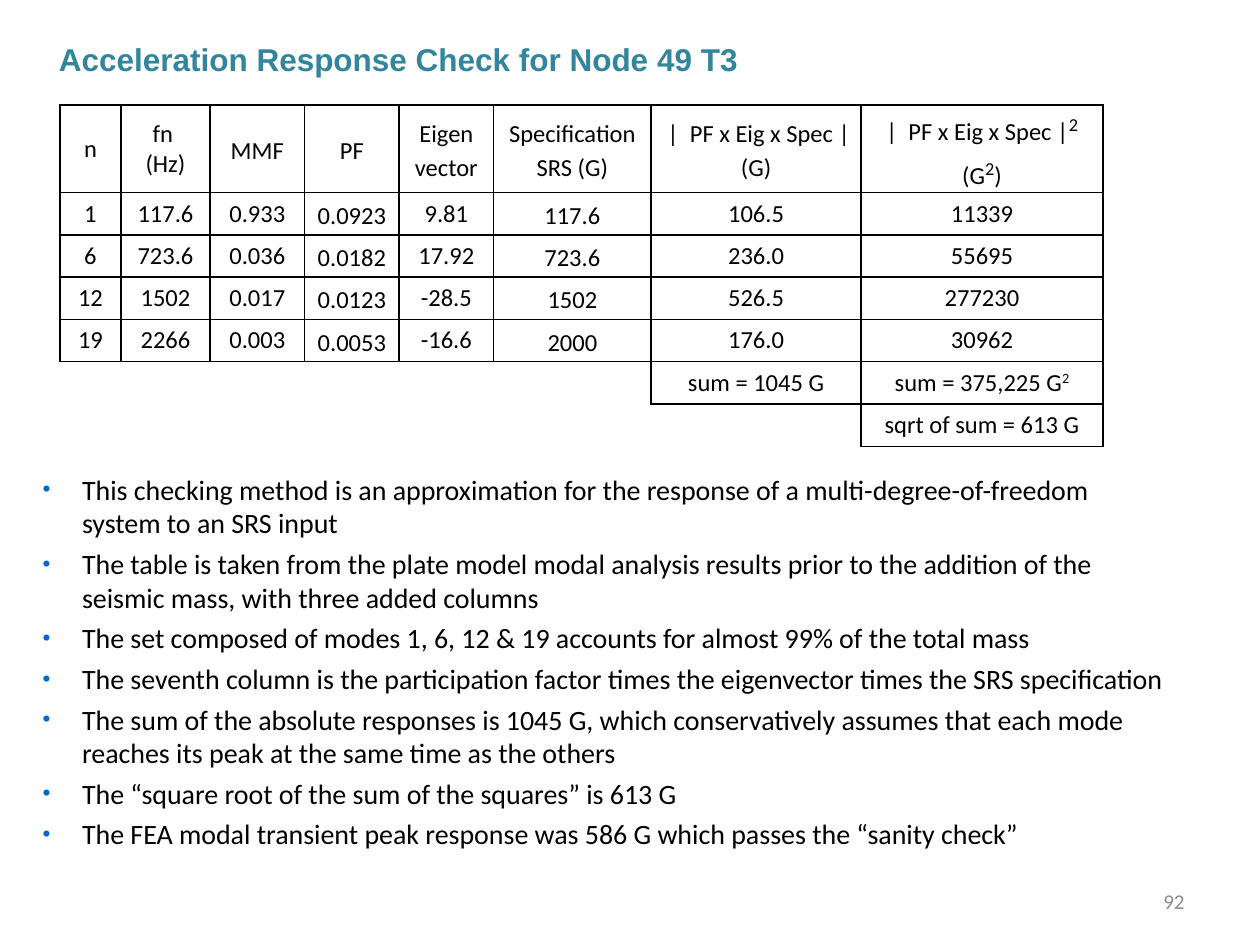
import dataclasses
import typing

import lxml.etree
import pptx
import pptx.dml.color
import pptx.enum.text
import pptx.oxml.ns
import pptx.util

Pt = pptx.util.Pt
qn = pptx.oxml.ns.qn
Align = pptx.enum.text.PP_ALIGN
Anchor = pptx.enum.text.MSO_ANCHOR


@dataclasses.dataclass(frozen=True)
class TextStyle:
    size: float
    color: str = "000000"
    name: str = "Calibri"
    bold: bool = False
    superscript_size: float = 14


@dataclasses.dataclass(frozen=True)
class TextBlock:
    left: float
    top: float
    width: float
    height: float
    lines: tuple[str, ...]
    style: TextStyle
    paragraph_format: dict[str, typing.Any]
    anchor: Anchor = Anchor.TOP
    bulleted: bool = False


COLUMN_WIDTHS = (34.8, 51, 54, 54, 54, 90, 120, 138.2)
HEADER_HEIGHT = 50
ROW_HEIGHT = 24.2
ROWS = (
    ("n", "fn \n(Hz)", "MMF", "PF", "Eigen\nvector", "Specification\nSRS (G)",
     " |  PF x Eig x Spec |\n(G)", "|  PF x Eig x Spec |^2^\n(G^2^)"),
    ("1", "117.6", "0.933", "0.0923", "9.81", "117.6", "106.5", "11339"),
    ("6", "723.6", "0.036", "0.0182", "17.92", "723.6", "236.0", "55695"),
    ("12", "1502", "0.017", "0.0123", "-28.5", "1502", "526.5", "277230"),
    ("19", "2266", "0.003", "0.0053", "-16.6", "2000", "176.0", "30962"),
    ("",) * 6 + ("sum = 1045 G", "sum = 375,225 G^2^"),
    ("",) * 7 + ("sqrt of sum = 613 G",),
)
EDGES = {"lnL": (0, -1), "lnR": (0, 1), "lnT": (-1, 0), "lnB": (1, 0)}
HEADER_STYLE = TextStyle(14, superscript_size=18)
BODY_STYLE = TextStyle(14)
SPACING = {"space_before": Pt(2), "space_after": Pt(2)}

TITLE = TextBlock(
    26.6, 19.4, 615, 29, ("Acceleration Response Check for Node 49 T3",),
    TextStyle(18, "31859C", "Arial", True), SPACING)
NOTES = TextBlock(
    17.3, 266.4, 654.5, 245,
    (
        "This checking method is an approximation for the response of a "
        "multi-degree-of-freedom system to an SRS input",
        "The table is taken from the plate model modal analysis results prior "
        "to the addition of the seismic mass, with three added columns",
        "The set composed of modes 1, 6, 12 & 19 accounts for almost 99% of the total mass",
        "The seventh column is the participation factor times the eigenvector "
        "times the SRS specification",
        "The sum of the absolute responses is 1045 G, which conservatively "
        "assumes that each mode reaches its peak at the same time as the others",
        "The “square root of the sum of the squares” is 613 G",
        "The FEA modal transient peak response was 586 G which passes the “sanity check”",
    ),
    TextStyle(16), SPACING, bulleted=True)
PAGE_NUMBER = TextBlock(
    516, 500.5, 168, 28.8, ("92",), TextStyle(12, "8C8C8C"),
    {"alignment": Align.RIGHT}, Anchor.MIDDLE)


def hex_color(value: str) -> pptx.dml.color.RGBColor:
    return pptx.dml.color.RGBColor.from_string(value)


def apply_format(target: typing.Any, values: dict[str, typing.Any]) -> None:
    for name, value in values.items():
        setattr(target, name, value)


def write_lines(text_frame, lines: typing.Sequence[str], style: TextStyle,
                paragraph_format: dict[str, typing.Any]) -> None:
    for index, line in enumerate(lines):
        paragraph = text_frame.add_paragraph() if index else text_frame.paragraphs[0]
        apply_format(paragraph, paragraph_format)
        for position, part in enumerate(line.split("^")):
            if not part:
                continue
            raised = position % 2 == 1
            run = paragraph.add_run()
            run.text = part
            size = style.superscript_size if raised else style.size
            apply_format(run.font, {"name": style.name, "size": Pt(size), "bold": style.bold})
            run.font.color.rgb = hex_color(style.color)
            if raised:
                run.font._element.set("baseline", "30000")


def add_bullet(paragraph) -> None:
    properties = paragraph._p.get_or_add_pPr()
    properties.set("marL", str(Pt(22.5)))
    properties.set("indent", str(-Pt(22.5)))
    color = lxml.etree.SubElement(properties, qn("a:buClr"))
    lxml.etree.SubElement(color, qn("a:srgbClr"), val="0066CC")
    lxml.etree.SubElement(properties, qn("a:buSzPct"), val="80000")
    lxml.etree.SubElement(properties, qn("a:buFont"), typeface="Arial")
    lxml.etree.SubElement(properties, qn("a:buChar"), char="•")


def add_text_block(slide, block: TextBlock) -> None:
    shape = slide.shapes.add_textbox(
        Pt(block.left), Pt(block.top), Pt(block.width), Pt(block.height))
    text_frame = shape.text_frame
    apply_format(text_frame, {"word_wrap": True, "vertical_anchor": block.anchor})
    write_lines(text_frame, block.lines, block.style, block.paragraph_format)
    if block.bulleted:
        for paragraph in text_frame.paragraphs:
            add_bullet(paragraph)


def has_text(row: int, column: int) -> bool:
    inside = 0 <= row < len(ROWS) and 0 <= column < len(COLUMN_WIDTHS)
    return inside and bool(ROWS[row][column])


def draw_borders(cell, row: int, column: int) -> None:
    properties = cell._tc.get_or_add_tcPr()
    for index, (tag, (row_step, column_step)) in enumerate(EDGES.items()):
        visible = has_text(row, column) or has_text(row + row_step, column + column_step)
        line = lxml.etree.Element(qn(f"a:{tag}"), w=str(Pt(1)))
        fill = lxml.etree.SubElement(line, qn("a:solidFill" if visible else "a:noFill"))
        if visible:
            lxml.etree.SubElement(fill, qn("a:srgbClr"), val="000000")
        properties.insert(index, line)


def fill_cell(cell, row: int, column: int) -> None:
    header = row == 0
    wide_margin = 5 if header or column in (0, 1, 2, 3, 5) else 0.7
    apply_format(cell, {
        "margin_left": Pt(wide_margin), "margin_right": Pt(wide_margin),
        "margin_top": Pt(0), "margin_bottom": Pt(0),
        "vertical_anchor": Anchor.MIDDLE,
    })
    loose = column >= 2 if header else column in (3, 5)
    paragraph_format = {"alignment": Align.CENTER, "line_spacing": 1.15 if loose else 1.0}
    write_lines(cell.text_frame, ROWS[row][column].split("\n"),
                HEADER_STYLE if header else BODY_STYLE, paragraph_format)
    cell.fill.background()
    draw_borders(cell, row, column)


def add_response_table(slide) -> None:
    heights = [HEADER_HEIGHT] + [ROW_HEIGHT] * (len(ROWS) - 1)
    table = slide.shapes.add_table(
        len(ROWS), len(COLUMN_WIDTHS), Pt(34.3), Pt(60),
        Pt(sum(COLUMN_WIDTHS)), Pt(sum(heights))).table
    apply_format(table, {"first_row": False, "horz_banding": False})
    for column, width in zip(table.columns, COLUMN_WIDTHS):
        column.width = Pt(width)
    for row, height in zip(table.rows, heights):
        row.height = Pt(height)
    for row in range(len(ROWS)):
        for column in range(len(COLUMN_WIDTHS)):
            fill_cell(table.cell(row, column), row, column)


def main() -> None:
    presentation = pptx.Presentation()
    apply_format(presentation, {"slide_width": Pt(720), "slide_height": Pt(540)})
    slide = presentation.slides.add_slide(presentation.slide_layouts[6])
    add_text_block(slide, PAGE_NUMBER)
    add_response_table(slide)
    add_text_block(slide, NOTES)
    add_text_block(slide, TITLE)
    presentation.save("out.pptx")


if __name__ == "__main__":
    main()
